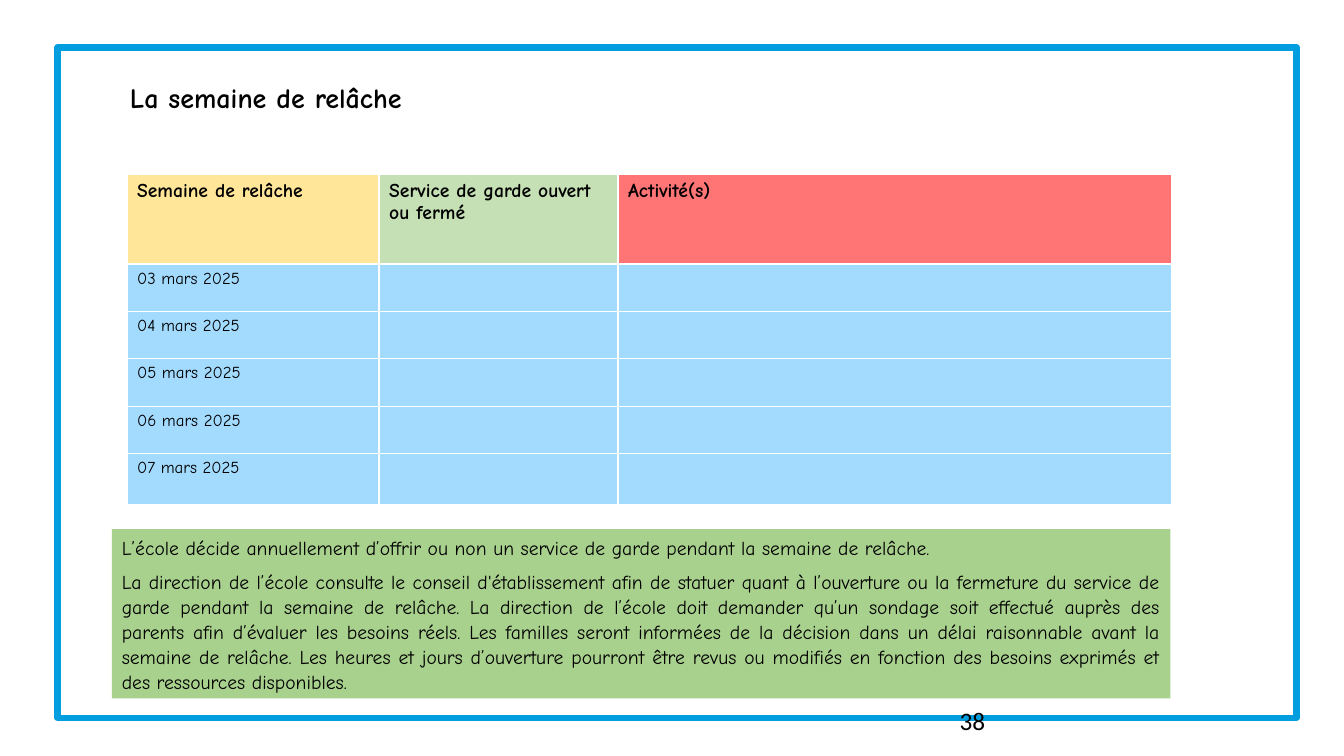
from pptx import Presentation
from pptx.dml.color import RGBColor
from pptx.enum import shapes, text
from pptx.util import Inches, Pt

# Content
TITLE = "La semaine de relâche"
HEADERS = [
    ("Semaine de relâche", "FFE699"),
    ("Service de garde ouvert ou fermé", "C5E0B4"),
    ("Activité(s)", "FF7474"),
]
DATES = [f"{day:02d} mars 2025" for day in range(3, 8)]
NOTES = [
    "L’école décide annuellement d’offrir ou non un service de garde pendant "
    "la semaine de relâche.",
    "La direction de l’école consulte le conseil d'établissement afin de statuer "
    "quant à l’ouverture ou la fermeture du service de garde pendant la semaine "
    "de relâche. La direction de l’école doit demander qu’un sondage soit effectué "
    "auprès des parents afin d’évaluer les besoins réels. Les familles seront "
    "informées de la décision dans un délai raisonnable avant la semaine de "
    "relâche. Les heures et jours d’ouverture pourront être revus ou modifiés en "
    "fonction des besoins exprimés et des ressources disponibles.",
]
PAGE = "38"

# Look
FONT = "Comic Neue"
BLACK, FRAME, ROW, NOTE = "000000", "009EDE", "A3DBFF", "A9D18E"
COLS = [2.5, 2.37, 5.49]
ROWS = [0.89] + [0.47] * 4 + [0.51]


def color(value):
    return RGBColor.from_string(value)


def fill(obj, value):
    obj.fill.solid()
    obj.fill.fore_color.rgb = color(value)


def write(p, words, size, bold=False, name=FONT):
    p.text = words
    p.font.name, p.font.size, p.font.bold = name, Pt(size), bold
    p.font.color.rgb = color(BLACK)


def add_rect(s, *box):
    sp = s.shapes.add_shape(shapes.MSO_SHAPE.RECTANGLE, *map(Inches, box))
    sp.shadow.inherit = False
    return sp


def add_label(s, box, words, size, anchor, **style):
    tf = s.shapes.add_textbox(*map(Inches, box)).text_frame
    tf.word_wrap = True
    tf.vertical_anchor = anchor
    write(tf.paragraphs[0], words, size, **style)


def add_schedule(s):
    table = s.shapes.add_table(len(ROWS), len(COLS), Inches(1.26), Inches(1.73),
                               Inches(sum(COLS)), Inches(sum(ROWS))).table
    for column, width in zip(table.columns, COLS):
        column.width = Inches(width)
    for row, height in zip(table.rows, ROWS):
        row.height = Inches(height)
        for cell in row.cells:
            fill(cell, ROW)
    for i, (words, shade) in enumerate(HEADERS):
        cell = table.cell(0, i)
        fill(cell, shade)
        write(cell.text_frame.paragraphs[0], words, 14, bold=True)
    for i, date in enumerate(DATES, 1):
        write(table.cell(i, 0).text_frame.paragraphs[0], date, 12)


def add_notes(s):
    sp = add_rect(s, 1.11, 5.25, 10.5, 1.68)
    fill(sp, NOTE)
    sp.line.fill.background()
    tf = sp.text_frame
    tf.word_wrap = True
    for i, words in enumerate(NOTES):
        p = tf.add_paragraph() if i else tf.paragraphs[0]
        write(p, words, 14)
        p.alignment = text.PP_ALIGN.JUSTIFY
        p.line_spacing = 1.07
    tf.paragraphs[0].space_after = Pt(6)


def main():
    prs = Presentation()
    prs.slide_width, prs.slide_height = Inches(13.33), Inches(7.5)
    s = prs.slides.add_slide(prs.slide_layouts[6])

    # Frame
    frame = add_rect(s, 0.57, 0.47, 12.29, 6.65)
    frame.fill.background()
    frame.line.color.rgb = color(FRAME)
    frame.line.width = Pt(4.5)

    # Table, title, notes and page number
    add_schedule(s)
    add_label(s, (1.19, 0.41, 3.4, 0.77), TITLE, 20, text.MSO_ANCHOR.BOTTOM, bold=True)
    add_notes(s)
    add_label(s, (9.42, 6.95, 3, 0.4), PAGE, 18, text.MSO_ANCHOR.MIDDLE, name="Calibri")

    prs.save("out.pptx")


if __name__ == "__main__":
    main()
